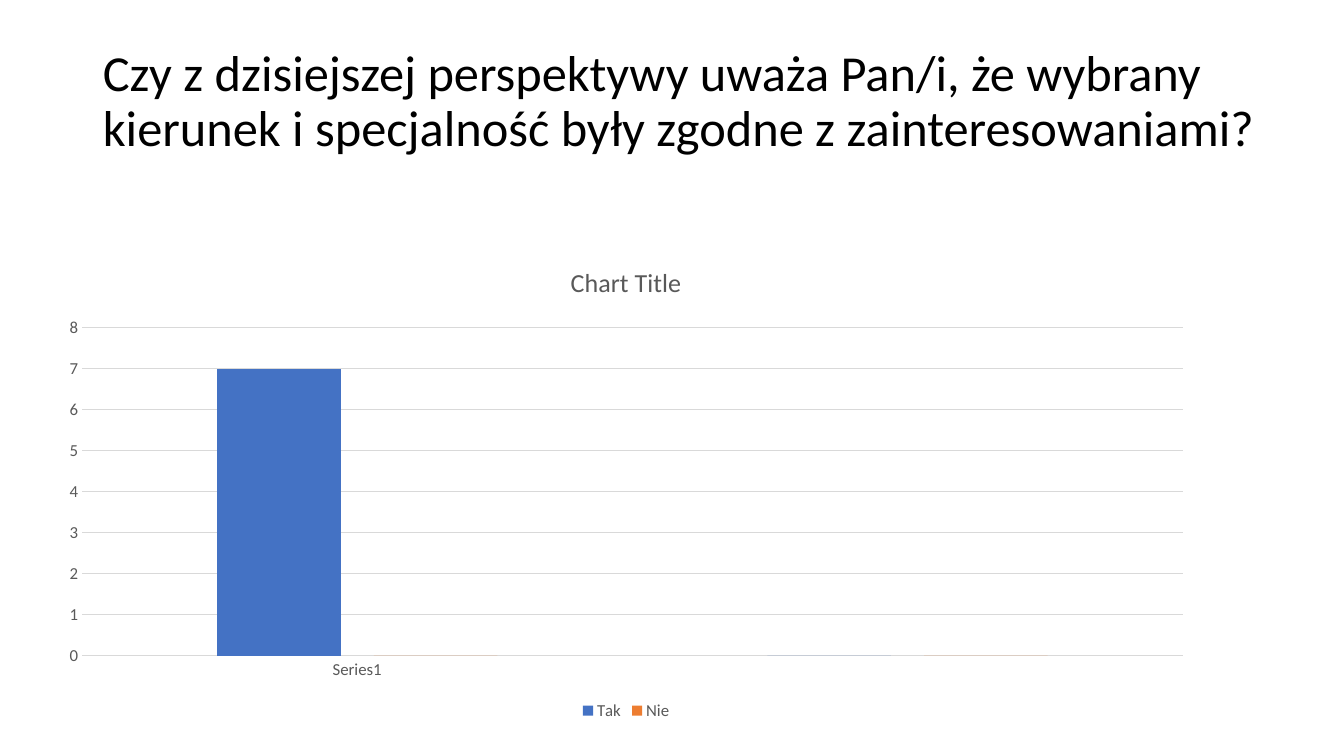
from pptx import Presentation
from pptx.chart.data import CategoryChartData
from pptx.dml.color import RGBColor
from pptx.enum.chart import XL_CHART_TYPE, XL_LEGEND_POSITION, XL_TICK_MARK
from pptx.enum.text import MSO_ANCHOR, PP_ALIGN
from pptx.util import Inches, Pt

FONT = "Calibri"
GREY_TEXT = "595959"
GREY_LINE = "D9D9D9"
ANSWERS = {"Tak": ((7, 0), "4472C4"), "Nie": ((0, 0), "ED7D31")}


def colour(hex_value):
    return RGBColor.from_string(hex_value)


def style_font(font, size, hex_value):
    font.name = FONT
    font.size = Pt(size)
    font.bold = False
    font.color.rgb = colour(hex_value)


def style_line(line):
    line.color.rgb = colour(GREY_LINE)
    line.width = Pt(0.75)


def place_question(slide, left, top, width, height):
    question = slide.shapes.title
    question.left, question.top = Inches(left), Inches(top)
    question.width, question.height = Inches(width), Inches(height)
    frame = question.text_frame
    frame.text = ("Czy z dzisiejszej perspektywy uważa Pan/i, że wybrany "
                  "kierunek i specjalność były zgodne z zainteresowaniami?")
    frame.word_wrap = True
    frame.vertical_anchor = MSO_ANCHOR.MIDDLE
    paragraph = frame.paragraphs[0]
    paragraph.alignment = PP_ALIGN.LEFT
    paragraph.line_spacing = 0.9
    style_font(paragraph.runs[0].font, 36, "000000")


def place_answer_chart(slide, left, top, width, height):
    answers = CategoryChartData()
    answers.categories = ["Series1", ""]
    for name, (counts, _) in ANSWERS.items():
        answers.add_series(name, counts)
    chart = slide.shapes.add_chart(
        XL_CHART_TYPE.COLUMN_CLUSTERED, Inches(left), Inches(top),
        Inches(width), Inches(height), answers).chart
    style_font(chart.font, 10, "000000")

    chart.has_title = True
    heading = chart.chart_title.text_frame
    heading.text = "Chart Title"
    style_font(heading.paragraphs[0].runs[0].font, 18.6, GREY_TEXT)
    chart.chart_title.include_in_layout = False

    chart.has_legend = True
    chart.legend.position = XL_LEGEND_POSITION.BOTTOM
    chart.legend.include_in_layout = False
    style_font(chart.legend.font, 12, GREY_TEXT)

    for axis in (chart.category_axis, chart.value_axis):
        axis.major_tick_mark = axis.minor_tick_mark = XL_TICK_MARK.NONE
        style_font(axis.tick_labels.font, 12, GREY_TEXT)
    style_line(chart.category_axis.format.line)
    counts_axis = chart.value_axis
    counts_axis.format.line.fill.background()
    counts_axis.minimum_scale, counts_axis.maximum_scale = 0, 8
    counts_axis.major_unit = 1
    style_line(counts_axis.major_gridlines.format.line)

    columns = chart.plots[0]
    columns.vary_by_categories = False
    columns.gap_width, columns.overlap = 219, -27
    for answer in columns.series:
        answer.format.fill.solid()
        answer.format.fill.fore_color.rgb = colour(ANSWERS[answer.name][1])


def main():
    deck = Presentation()
    deck.slide_width, deck.slide_height = Inches(13.33), Inches(7.5)
    slide = deck.slides.add_slide(deck.slide_layouts[5])
    place_question(slide, 0.92, 0.19, 11.82, 1.66)
    place_answer_chart(slide, 0.46, 2.43, 11.5, 4.76)
    deck.save("out.pptx")


if __name__ == "__main__":
    main()
